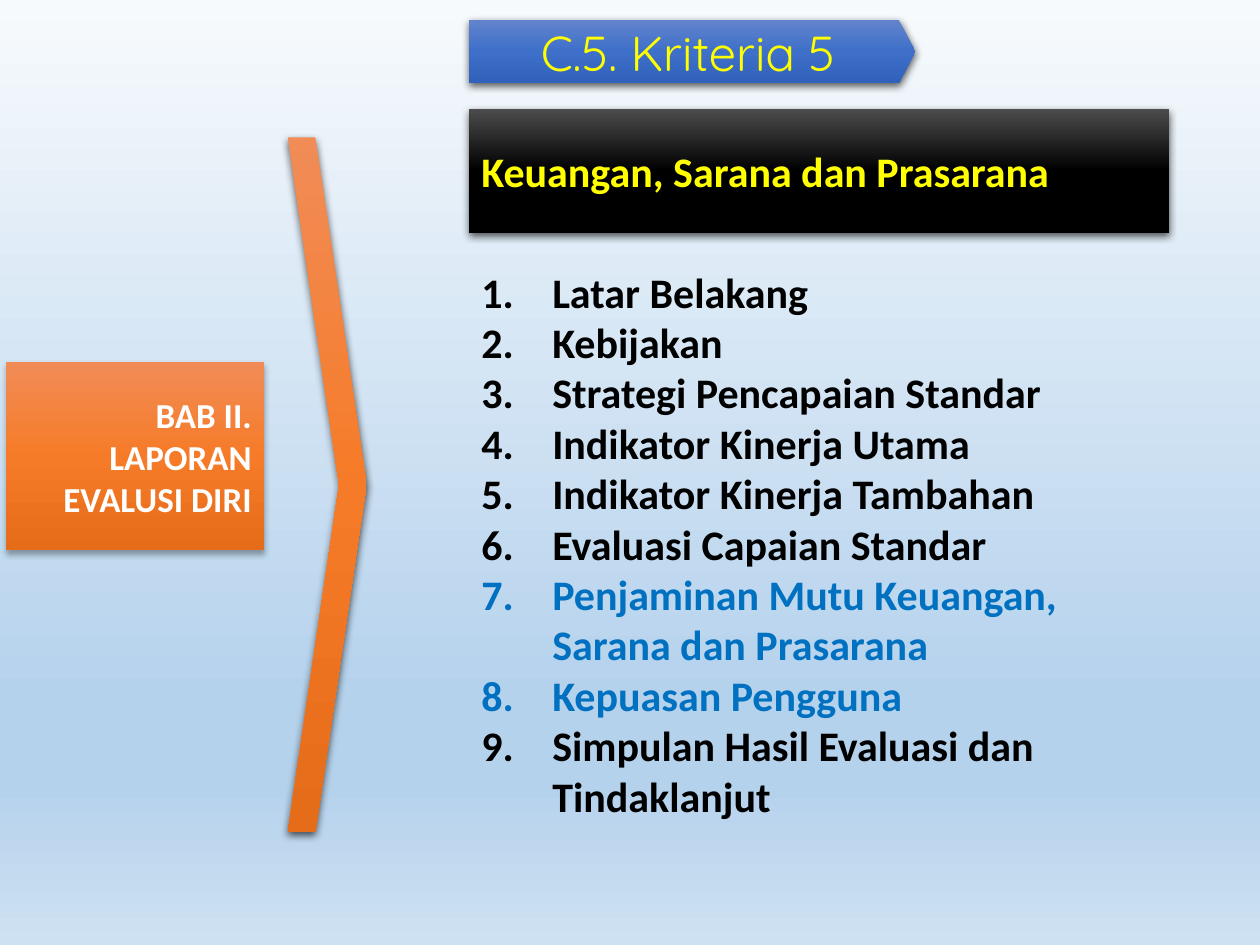
from lxml import etree
from pptx import Presentation
from pptx.dml.color import RGBColor
from pptx.enum import shapes, text
from pptx.oxml import ns
from pptx.util import Pt

ORANGE = [(0, "F18C57"), (50, "F67B28"), (100, "E56C19")]
BLUE = [(0, "6183CB"), (50, "3E70CA"), (100, "3062BB")]
BLACK = [(0, "4B4B4B"), (50, "000000"), (100, "000000")]
SKY = [(0, "F7FAFD"), (74, "B5D2EC"), (83, "B5D2EC"), (100, "CEE1F2")]
RIGHT, CENTER, LEFT = text.PP_ALIGN.RIGHT, text.PP_ALIGN.CENTER, text.PP_ALIGN.LEFT


def style_font(paragraph, face, size, color, bold):
    font = paragraph.runs[0].font
    font.name, font.size, font.bold = face, Pt(size), bold
    font.color.rgb = RGBColor.from_string(color)


def fill_gradient(fill, owner, stops):
    """Fill from top to bottom with (percent, colour) stops."""
    fill.gradient()
    fill.gradient_angle = 270
    stop_list = next(owner.iter(ns.qn("a:gsLst")))
    for old_stop in list(stop_list):
        stop_list.remove(old_stop)
    for percent, color in stops:
        stop = etree.SubElement(stop_list, ns.qn("a:gs"), pos=str(percent * 1000))
        etree.SubElement(stop, ns.qn("a:srgbClr"), val=color)


prs = Presentation()
prs.slide_width, prs.slide_height = Pt(720), Pt(540)
slide = prs.slides.add_slide(prs.slide_layouts[6])
fill_gradient(slide.background.fill, slide.background._cSld, SKY)

# Panels: preset, box, adjustment, gradient, shadow (opacity, blur, distance), label
S = shapes.MSO_SHAPE
panels = [
    (S.RECTANGLE, (268, 62.5, 400, 70.5), None, BLACK, (63, 4.5, 1.5),
     ("Keuangan, Sarana dan Prasarana", LEFT, "Calibri", 24, "FFFF00", True)),
    (S.CHEVRON, (164.5, 78.5, 45, 397), 0.65, ORANGE, (63, 4.5, 1.5), None),
    (S.PENTAGON, (268, 11.5, 255, 36), 0.26, BLUE, (63, 4.5, 1.5),
     ("C.5. Kriteria 5", CENTER, "Quicksand", 28, "FFFF00", False)),
    (S.RECTANGLE, (3.5, 207, 147.5, 107.5), None, ORANGE, (32, 3.5, 2.2),
     ("BAB II. LAPORAN EVALUSI DIRI", RIGHT, "Calibri", 20, "FFFFFF", True)),
]
for preset, box, adjustment, gradient, (opacity, blur, distance), label in panels:
    panel = slide.shapes.add_shape(preset, *map(Pt, box))
    if adjustment is not None:
        panel.adjustments[0] = adjustment
    fill_gradient(panel.fill, panel._element.spPr, gradient)
    panel.line.fill.background()

    # Soft shadow straight below
    panel.shadow.inherit = False
    effects = panel._element.spPr.find(ns.qn("a:effectLst"))
    shadow = etree.SubElement(
        effects, ns.qn("a:outerShdw"), blurRad=str(Pt(blur)), dist=str(Pt(distance)),
        dir="5400000", algn="ctr", rotWithShape="0")
    shadow_color = etree.SubElement(shadow, ns.qn("a:srgbClr"), val="000000")
    etree.SubElement(shadow_color, ns.qn("a:alpha"), val=str(opacity * 1000))

    if label:
        wording, alignment, *font_style = label
        frame = panel.text_frame
        frame.text = wording
        frame.word_wrap = True
        frame.vertical_anchor = text.MSO_ANCHOR.MIDDLE
        frame.paragraphs[0].alignment = alignment
        style_font(frame.paragraphs[0], *font_style)

# Numbered list of sections, with the criterion-specific ones in blue
sections = [
    ("Latar Belakang", "000000"),
    ("Kebijakan", "000000"),
    ("Strategi Pencapaian Standar", "000000"),
    ("Indikator Kinerja Utama", "000000"),
    ("Indikator Kinerja Tambahan", "000000"),
    ("Evaluasi Capaian Standar", "000000"),
    ("Penjaminan Mutu Keuangan, Sarana dan Prasarana", "0070C0"),
    ("Kepuasan Pengguna", "0070C0"),
    ("Simpulan Hasil Evaluasi dan Tindaklanjut", "000000"),
]
outline = slide.shapes.add_textbox(Pt(268), Pt(148.5), Pt(400), Pt(327)).text_frame
outline.text = "\n".join(title for title, _ in sections)
outline.word_wrap = True
outline.auto_size = text.MSO_AUTO_SIZE.SHAPE_TO_FIT_TEXT
for paragraph, (_, color) in zip(outline.paragraphs, sections):
    style_font(paragraph, "Calibri", 24, color, True)
    properties = paragraph._p.get_or_add_pPr()
    properties.set("marL", str(Pt(40.5)))
    properties.set("indent", str(-Pt(40.5)))
    etree.SubElement(properties, ns.qn("a:buFont"), typeface="+mj-lt")
    etree.SubElement(properties, ns.qn("a:buAutoNum"), type="arabicPeriod")

prs.save("out.pptx")
